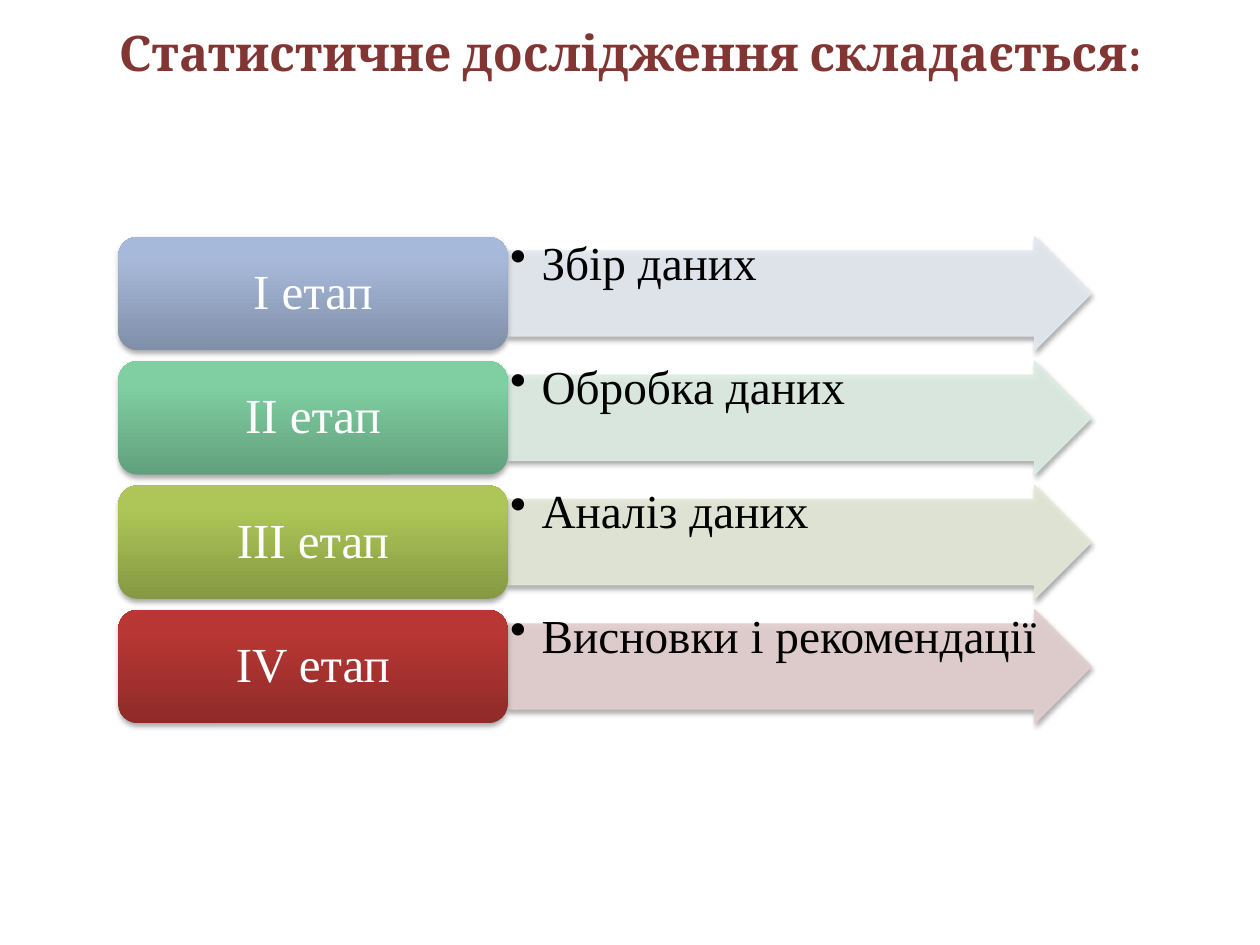
from dataclasses import dataclass

from lxml import etree
from pptx import Presentation
from pptx import util as u
from pptx.dml.color import RGBColor
from pptx.enum import shapes, text
from pptx.oxml.ns import qn


@dataclass(frozen=True)
class Theme:
    title_color: str = "823634"
    label_color: str = "FFFFFF"
    body_color: str = "000000"
    shadow_color: str = "000000"
    title_font: str = "Cambria"
    body_font: str = "Times New Roman"
    title_size: int = 28
    label_size: int = 28
    body_size: int = 27
    arrow_opacity: int = 90
    shadow_opacity: int = 35


THEME = Theme()
STAGES = [
    ("І етап", "Збір даних", "E4E9F1", ("808FA8", "A7B9DA", "A6BADC")),
    ("ІІ етап", "Обробка даних", "DDEDE4", ("62A07D", "80CFA2", "7FD2A3")),
    ("ІІІ етап", "Аналіз даних", "E4E8D6", ("859943", "ADC657", "AFC955")),
    ("ІV етап", "Висновки і рекомендації", "E3CFCF", ("8E2B28", "B83734", "BB3531")),
]
GRADIENT_POSITIONS = (0, 80, 100)


def set_values(target, values):
    for name, value in values.items():
        setattr(target, name, value)


def inches_box(left, top, width, height):
    return [u.Inches(value) for value in (left, top, width, height)]


def add_color(parent, color, opacity=100):
    element = etree.SubElement(parent, qn("a:srgbClr"), val=color)
    if opacity < 100:
        etree.SubElement(element, qn("a:alpha"), val=str(opacity * 1000))


def add_shadow(shape):
    shape.shadow.inherit = False
    effects = shape._element.spPr.find(qn("a:effectLst"))
    shadow = etree.SubElement(
        effects, qn("a:outerShdw"), blurRad=str(u.Pt(3.1)), dist=str(u.Pt(1.8)),
        dir="5400000", rotWithShape="0")
    add_color(shadow, THEME.shadow_color, THEME.shadow_opacity)


def fill_solid(fill, color, opacity):
    fill.solid()
    fill.fore_color.rgb = RGBColor.from_string(color)
    for element in fill._xPr.iter(qn("a:srgbClr")):
        etree.SubElement(element, qn("a:alpha"), val=str(opacity * 1000))


def fill_gradient(shape, colors):
    shape.fill.gradient()
    shape.fill.gradient_angle = 90
    stops = next(shape._element.spPr.iter(qn("a:gsLst")))
    for stop in list(stops):
        stops.remove(stop)
    for position, color in zip(GRADIENT_POSITIONS, colors):
        add_color(etree.SubElement(stops, qn("a:gs"), pos=str(position * 1000)), color)


def write_text(shape, wording, font, size, color, inset, anchor, align,
               bold=False, spacing=None, bullet_indent=None):
    frame = shape.text_frame
    horizontal, vertical = (u.Inches(value) for value in inset)
    set_values(frame, {
        "word_wrap": True, "auto_size": text.MSO_AUTO_SIZE.NONE,
        "vertical_anchor": anchor,
        "margin_left": horizontal, "margin_right": horizontal,
        "margin_top": vertical, "margin_bottom": vertical})
    paragraph = frame.paragraphs[0]
    set_values(paragraph, {"text": wording, "alignment": align, "line_spacing": spacing})
    if bullet_indent:
        properties = paragraph._p.get_or_add_pPr()
        properties.set("marL", str(u.Inches(bullet_indent)))
        properties.set("indent", str(-u.Inches(bullet_indent)))
        etree.SubElement(properties, qn("a:buChar"), char="•")
    run_font = paragraph.runs[0].font
    set_values(run_font, {"name": font, "size": u.Pt(size), "bold": bold})
    run_font.color.rgb = RGBColor.from_string(color)


def add_title(slide, box, wording):
    title = slide.shapes.title
    set_values(title, dict(zip(("left", "top", "width", "height"), inches_box(*box))))
    write_text(title, wording, THEME.title_font, THEME.title_size, THEME.title_color,
               (0.1, 0.05), text.MSO_ANCHOR.TOP, text.PP_ALIGN.CENTER, bold=True)


def add_arrow(slide, box, wording, color):
    arrow = slide.shapes.add_shape(shapes.MSO_SHAPE.RIGHT_ARROW, *inches_box(*box))
    arrow.adjustments[0] = 0.75
    arrow.adjustments[1] = 0.5
    fill_solid(arrow.fill, color, THEME.arrow_opacity)
    fill_solid(arrow.line.fill, color, THEME.arrow_opacity)
    arrow.line.width = u.Pt(0.75)
    add_shadow(arrow)
    caption = slide.shapes.add_textbox(*inches_box(*box))
    write_text(caption, wording, THEME.body_font, THEME.body_size, THEME.body_color,
               (0.02, 0.02), text.MSO_ANCHOR.TOP, text.PP_ALIGN.LEFT,
               spacing=0.9, bullet_indent=0.25)


def add_label(slide, box, wording, colors):
    label = slide.shapes.add_shape(shapes.MSO_SHAPE.ROUNDED_RECTANGLE, *inches_box(*box))
    fill_gradient(label, colors)
    label.line.fill.background()
    add_shadow(label)
    write_text(label, wording, THEME.body_font, THEME.label_size, THEME.label_color,
               (0.12, 0.06), text.MSO_ANCHOR.MIDDLE, text.PP_ALIGN.CENTER, spacing=0.9)


def add_stages(slide, box, stages):
    left, top, width, height = box
    label_width = width * 0.4
    row_height = 0.9
    pitch = (height - row_height) / (len(stages) - 1)
    for index, (label, description, arrow_color, label_colors) in enumerate(stages):
        row_top = top + index * pitch
        add_arrow(slide, (left + label_width, row_top, width - label_width, row_height),
                  description, arrow_color)
        add_label(slide, (left, row_top, label_width, row_height), label, label_colors)


def main():
    presentation = Presentation()
    set_values(presentation, {"slide_width": u.Inches(10), "slide_height": u.Inches(7.5)})
    slide = presentation.slides.add_slide(presentation.slide_layouts[5])
    add_title(slide, (0.5, 0.13, 9, 0.55), "Статистичне дослідження складається:")
    add_stages(slide, (0.94, 1.88, 7.72, 3.86), STAGES)
    presentation.save("out.pptx")


if __name__ == "__main__":
    main()
